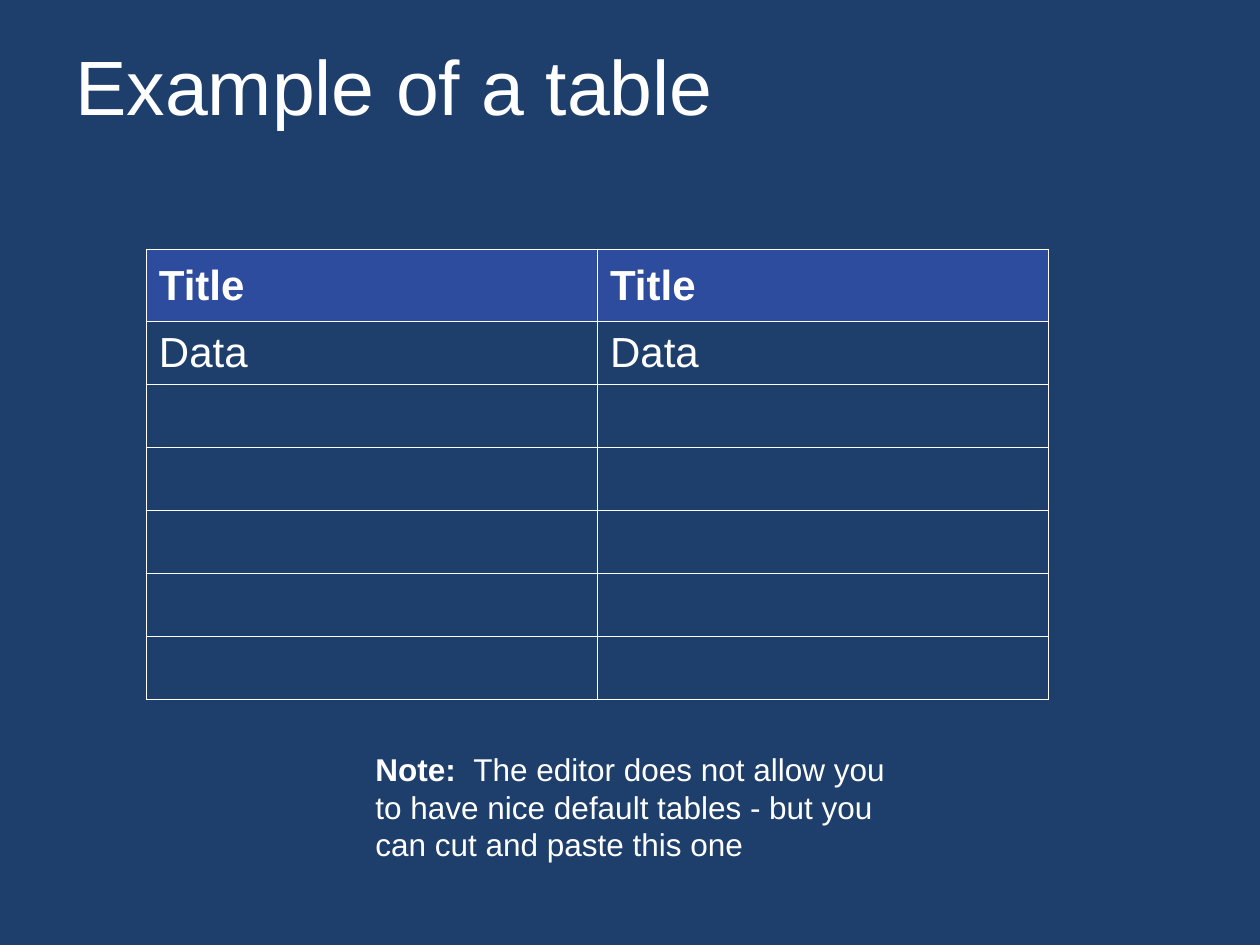
from dataclasses import dataclass
from typing import Any

from lxml.etree import SubElement
from pptx import Presentation
from pptx.dml.color import RGBColor
from pptx.enum.text import MSO_AUTO_SIZE as AutoSize, MSO_VERTICAL_ANCHOR as Anchor
from pptx.oxml import parse_xml
from pptx.oxml.ns import nsdecls, qn
from pptx.util import Cm, Pt

COLUMNS = 2
ROWS = [["Title"] * COLUMNS, ["Data"] * COLUMNS] + [[""] * COLUMNS] * 5
HEADER_HEIGHT, ROW_HEIGHT = 1.45, 1.27


def paint(target, colour):
    target.solid()
    target.fore_color.rgb = RGBColor.from_string(colour)


def add_span(para, text, *, size, colour, font, bold=False):
    span = para.add_run()
    span.text = text
    span.font.name = font
    span.font.size = Pt(size)
    span.font.bold = bold
    span.font.color.rgb = RGBColor.from_string(colour)


@dataclass
class SlideBuilder:
    page: Any
    font: str = "Arial"
    ground: str = "1E3F6C"
    header: str = "2E4C9D"
    ink: str = "FFFFFF"

    def background(self):
        paint(self.page.background.fill, self.ground)

    def text(self, left, top, width, height, spans, size, anchor=Anchor.TOP):
        """Add a text box; spans is a list of (text, bold) pairs."""
        box = self.page.shapes.add_textbox(Cm(left), Cm(top), Cm(width), Cm(height))
        frame = box.text_frame
        frame.word_wrap = True
        frame.auto_size = AutoSize.NONE
        frame.vertical_anchor = anchor
        for text, bold in spans:
            add_span(frame.paragraphs[0], text, size=size, colour=self.ink,
                     font=self.font, bold=bold)

    def border(self, cell):
        properties = cell._tc.get_or_add_tcPr()
        for index, side in enumerate("LRTB"):
            line = parse_xml(f'<a:ln{side} {nsdecls("a")} w="{Pt(1)}"/>')
            fill = SubElement(line, qn("a:solidFill"))
            SubElement(fill, qn("a:srgbClr"), val=self.ink)
            properties.insert(index, line)

    def table(self, left, top, width, rows, size):
        height = HEADER_HEIGHT + ROW_HEIGHT * (len(rows) - 1)
        table = self.page.shapes.add_table(
            len(rows), COLUMNS, Cm(left), Cm(top), Cm(width), Cm(height)).table
        table.horz_banding = False
        for column in table.columns:
            column.width = Cm(width / COLUMNS)
        for number, texts in enumerate(rows):
            is_header = number == 0
            table.rows[number].height = Cm(HEADER_HEIGHT if is_header else ROW_HEIGHT)
            for cell, text in zip(table.rows[number].cells, texts):
                cell.vertical_anchor = Anchor.MIDDLE
                if is_header:
                    paint(cell.fill, self.header)
                else:
                    cell.fill.background()
                self.border(cell)
                if text:
                    add_span(cell.text_frame.paragraphs[0], text, size=size,
                             colour=self.ink, font=self.font, bold=is_header)


def main():
    deck = Presentation()
    deck.slide_width, deck.slide_height = Cm(25.4), Cm(19.05)
    builder = SlideBuilder(deck.slides.add_slide(deck.slide_layouts[6]))
    builder.background()

    # Title
    builder.text(1.27, 0.71, 23.04, 2.01, [("Example of a table", False)], 44,
                 Anchor.MIDDLE)

    # Table
    builder.table(2.95, 5.03, 18.19, ROWS, 24)

    # Note
    note = ("The editor does not allow you to have nice default tables"
            " - but you can cut and paste this one")
    builder.text(7.32, 14.99, 11.4, 2.54, [("Note:  ", True), (note, False)], 18)

    deck.save("out.pptx")


if __name__ == "__main__":
    main()
